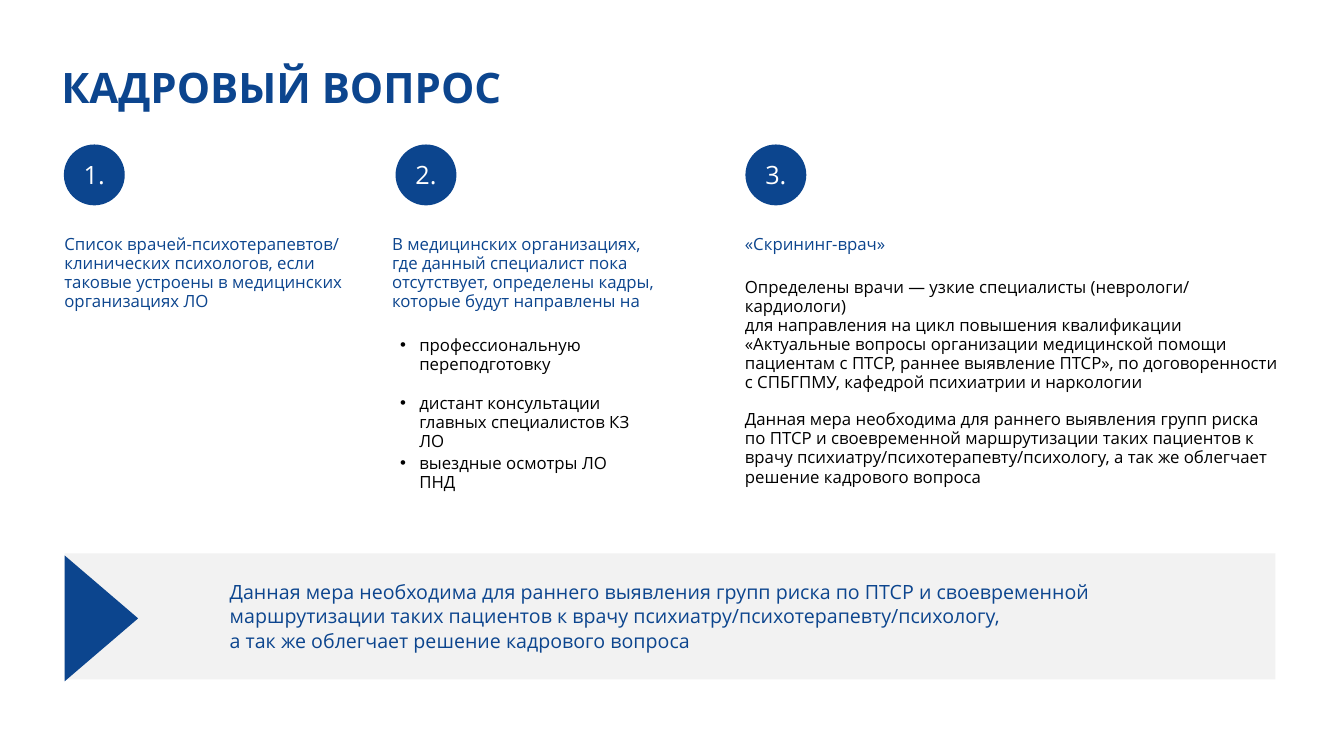
import pptx
import pptx.dml.color
import pptx.enum.shapes
import pptx.enum.text
import pptx.util
from lxml import etree

EMU_PER_PX = 9144
BLUE, GREY, BLACK, WHITE = "0C458E", "F2F2F2", "000000", "FFFFFF"
SHAPES = pptx.enum.shapes.MSO_SHAPE

LABEL_TOP = 228
LABELS = [
    (54, 312, 89, "Список врачей-психотерапевтов/ клинических психологов, если таковые "
                  "устроены в медицинских организациях ЛО"),
    (379, 312, 89, "В медицинских организациях, \nгде данный специалист пока отсутствует, "
                   "определены кадры, которые будут направлены на"),
    (729, 180, 30, "«Скрининг-врач»"),
]
CIRCLE_LEFTS = [64, 393, 740]
BULLETS = [
    (328, 49, "профессиональную переподготовку"),
    (386, 69, "дистант консультации главных специалистов КЗ ЛО"),
    (445, 49, "выездные осмотры ЛО ПНД"),
]
PURPOSE = ("Данная мера необходима для раннего выявления групп риска по ПТСР и своевременной "
           "маршрутизации таких пациентов к врачу психиатру/психотерапевту/психологу, "
           "{}а так же облегчает решение кадрового вопроса")
SCREENING = [
    (271, 107, "Определены врачи — узкие специалисты (неврологи/ кардиологи) \n"
               "для направления на цикл повышения квалификации «Актуальные вопросы организации "
               "медицинской помощи пациентам с ПТСР, раннее выявление ПТСР», "
               "по договоренности с СПБГПМУ, кафедрой психиатрии и наркологии"),
    (402, 89, PURPOSE.format("")),
]


def px(*lengths):
    return [pptx.util.Emu(length * EMU_PER_PX) for length in lengths]


def color(value):
    return pptx.dml.color.RGBColor.from_string(value)


def set_attributes(target, values):
    for name, value in values.items():
        setattr(target, name, value)


def write_text(paragraph, text, size, text_color, bold=False):
    paragraph.text = text
    for run in paragraph.runs:
        set_attributes(run.font, {"name": "Open Sans", "size": pptx.util.Pt(size), "bold": bold})
        run.font.color.rgb = color(text_color)


def add_text(slide, box, text, size=12, text_color=BLUE, spacing=13.6, bold=False):
    frame = slide.shapes.add_textbox(*px(*box)).text_frame
    set_attributes(frame, {
        "word_wrap": True,
        "auto_size": pptx.enum.text.MSO_AUTO_SIZE.SHAPE_TO_FIT_TEXT,
    })
    paragraph = frame.paragraphs[0]
    if spacing:
        paragraph.line_spacing = pptx.util.Pt(spacing)
    write_text(paragraph, text, size, text_color, bold)
    return paragraph


def add_bullet(slide, box, text):
    properties = add_text(slide, box, text, text_color=BLACK)._p.get_or_add_pPr()
    indent = px(19)[0]
    properties.set("marL", str(indent))
    properties.set("indent", str(-indent))
    for tag, name, value in [("buFont", "typeface", "Arial"), ("buChar", "char", "•")]:
        etree.SubElement(properties, pptx.oxml.ns.qn(f"a:{tag}")).set(name, value)


def add_filled_shape(slide, kind, box, fill):
    shape = slide.shapes.add_shape(kind, *px(*box))
    shape.shadow.inherit = False
    shape.fill.solid()
    shape.fill.fore_color.rgb = color(fill)
    shape.line.fill.background()
    return shape


def add_number_circle(slide, left, number):
    circle = add_filled_shape(slide, SHAPES.OVAL, (left, 144, 59, 59), BLUE)
    circle.line.color.rgb = color(BLUE)
    circle.line.width = pptx.util.Pt(1)
    set_attributes(circle.text_frame, {
        "vertical_anchor": pptx.enum.text.MSO_ANCHOR.MIDDLE,
        "word_wrap": False,
    })
    paragraph = circle.text_frame.paragraphs[0]
    paragraph.alignment = pptx.enum.text.PP_ALIGN.CENTER
    write_text(paragraph, f"{number}.", 18, WHITE)


def main():
    presentation = pptx.Presentation()
    width, height = px(1333, 750)
    set_attributes(presentation, {"slide_width": width, "slide_height": height})
    slide = presentation.slides.add_slide(presentation.slide_layouts[6])

    add_filled_shape(slide, SHAPES.RECTANGLE, (64, 549, 1201, 125), GREY)
    add_text(slide, (51, 56, 777, 61), "КАДРОВЫЙ ВОПРОС", size=30, spacing=None, bold=True)
    for left, label_width, label_height, text in LABELS:
        add_text(slide, (left, LABEL_TOP, label_width, label_height), text)
    add_text(slide, (218, 569, 930, 85), PURPOSE.format("\n"), size=14, spacing=17.6)
    for top, bullet_height, text in BULLETS:
        add_bullet(slide, (387, top, 249, bullet_height), text)
    for top, text_height, text in SCREENING:
        add_text(slide, (729, top, 550, text_height), text, text_color=BLACK)
    for number, left in enumerate(CIRCLE_LEFTS, start=1):
        add_number_circle(slide, left, number)
    add_filled_shape(slide, SHAPES.ISOSCELES_TRIANGLE, (38, 577, 125, 73), BLUE).rotation = 90

    presentation.save("out.pptx")


if __name__ == "__main__":
    main()
